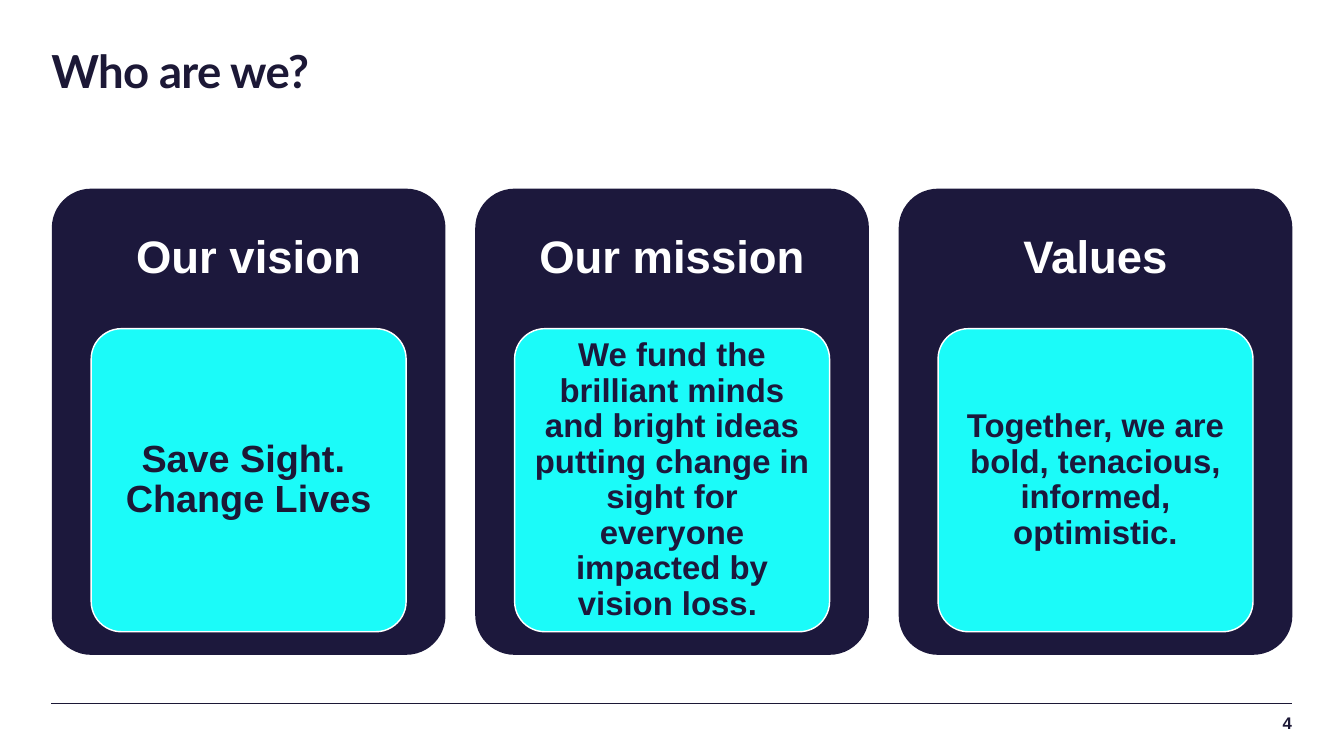
from lxml.etree import SubElement
from pptx import Presentation
from pptx.dml.color import RGBColor
from pptx.enum.shapes import MSO_CONNECTOR, MSO_SHAPE
from pptx.enum.text import MSO_ANCHOR, PP_ALIGN
from pptx.oxml.ns import qn
from pptx.util import Pt

COLORS = {"ink": "1C1836", "navy": "1C183C", "cyan": "1BFBF9", "white": "FFFFFF"}

deck = Presentation()
deck.slide_width, deck.slide_height = Pt(1920.24), Pt(1080)
slide = deck.slides.add_slide(deck.slide_layouts[6])
shapes = slide.shapes


def add_text(text, box, size, color="ink", font="Arial", align=PP_ALIGN.CENTER,
             anchor=MSO_ANCHOR.MIDDLE, inset=(0, 0), lines=0.9, track=0):
    """Add a bold text box; inset is (sides, top and bottom), track is in points."""
    frame = shapes.add_textbox(*map(Pt, box)).text_frame
    frame.word_wrap = True
    frame.vertical_anchor = anchor
    frame.margin_left = frame.margin_right = Pt(inset[0])
    frame.margin_top = frame.margin_bottom = Pt(inset[1])
    para = frame.paragraphs[0]
    para.text = text
    para.alignment = align
    para.line_spacing = lines
    for run in para.runs:
        run.font.name = font
        run.font.size = Pt(size)
        run.font.bold = True
        run.font.color.rgb = RGBColor.from_string(COLORS[color])
        if track:
            run.font._element.set("spc", str(track * 100))


def add_card(box, fill, line=None):
    card = shapes.add_shape(MSO_SHAPE.ROUNDED_RECTANGLE, *map(Pt, box))
    card.adjustments[0] = 0.1
    card.shadow.inherit = False
    card.fill.solid()
    card.fill.fore_color.rgb = RGBColor.from_string(COLORS[fill])
    if line:
        card.line.color.rgb = RGBColor.from_string(COLORS[line])
        card.line.width = Pt(2)
    else:
        card.line.fill.background()


# Title, footer rule and page number
left, right = 73.5, 1846
rule = shapes.add_connector(MSO_CONNECTOR.STRAIGHT, Pt(left), Pt(1005), Pt(right), Pt(1005))
rule.line.color.rgb = RGBColor.from_string(COLORS["ink"])
rule.line.width = Pt(0.5)
SubElement(rule._element.spPr, qn("a:effectLst"))

add_text("Who are we?", (left, 73.5, right - left, 124.5), 65, font="Lato",
         align=PP_ALIGN.LEFT, anchor=MSO_ANCHOR.TOP, lines=0.85, track=-1)
add_text("4", (right - 113, 1019, 113, 28), 24, align=PP_ALIGN.RIGHT,
         anchor=MSO_ANCHOR.BOTTOM, lines=1)

# Three cards, each with a heading and an inner panel
cards = [
    ("Our vision", "Save Sight. \nChange Lives", 54, "ink", (10.8, 8)),
    ("Our mission", "We fund the brilliant minds and bright ideas putting change in "
     "sight for everyone impacted by vision loss. ", 47, "navy", (9.4, 7)),
    ("Values", "Together, we are bold, tenacious, informed, optimistic.",
     47, "navy", (9.4, 7)),
]
top, wide, tall, step = 269.5, 562.5, 666, 605
head, pad, edge = 200, 56.25, 12.5
inner_w, inner_h = wide - 2 * pad, 433

for i, (title, body, size, color, inset) in enumerate(cards):
    x = 74 + i * step
    y = top + head
    add_card((x, top, wide, tall), "navy")
    add_text(title, (x, top, wide, head), 65, "white", inset=(19.5, 19.5))
    add_card((x + pad, y, inner_w, inner_h), "cyan", "white")
    add_text(body, (x + pad + edge, y + edge, inner_w - 2 * edge, inner_h - 2 * edge),
             size, color, inset=inset)

deck.save("out.pptx")
